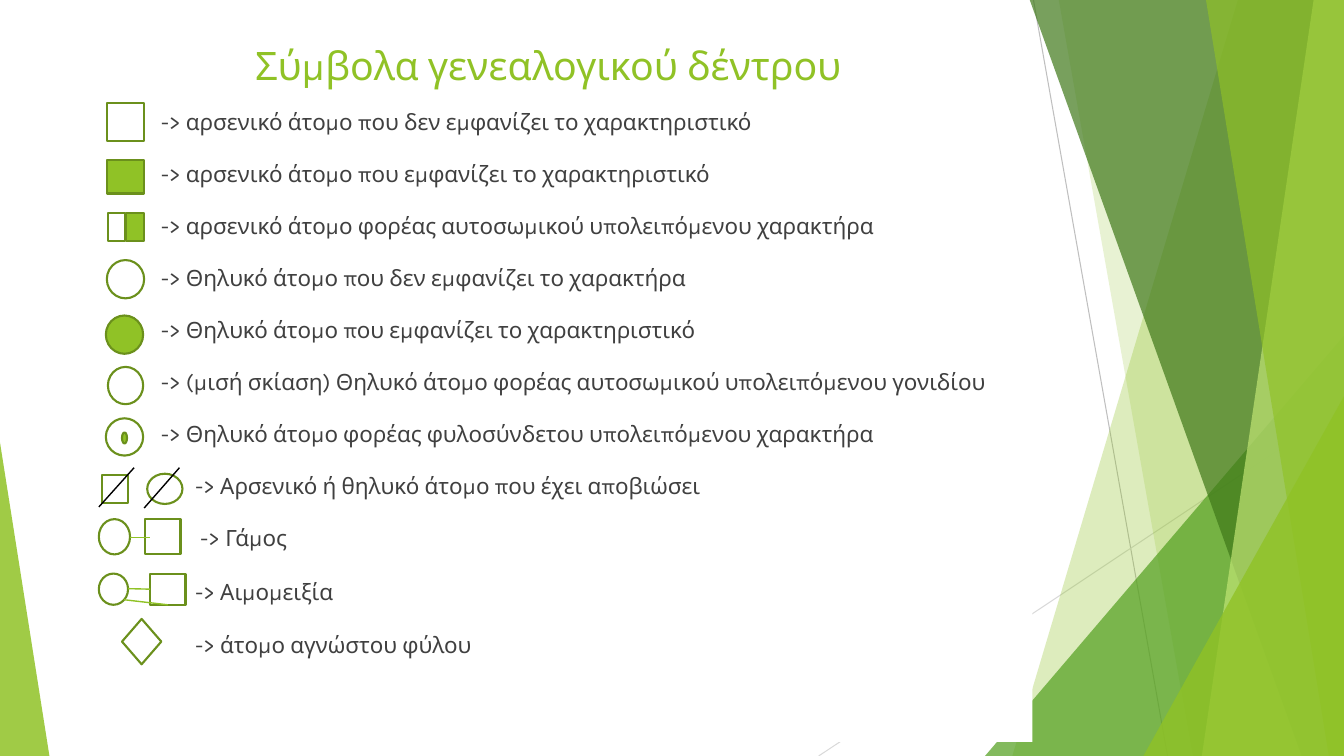
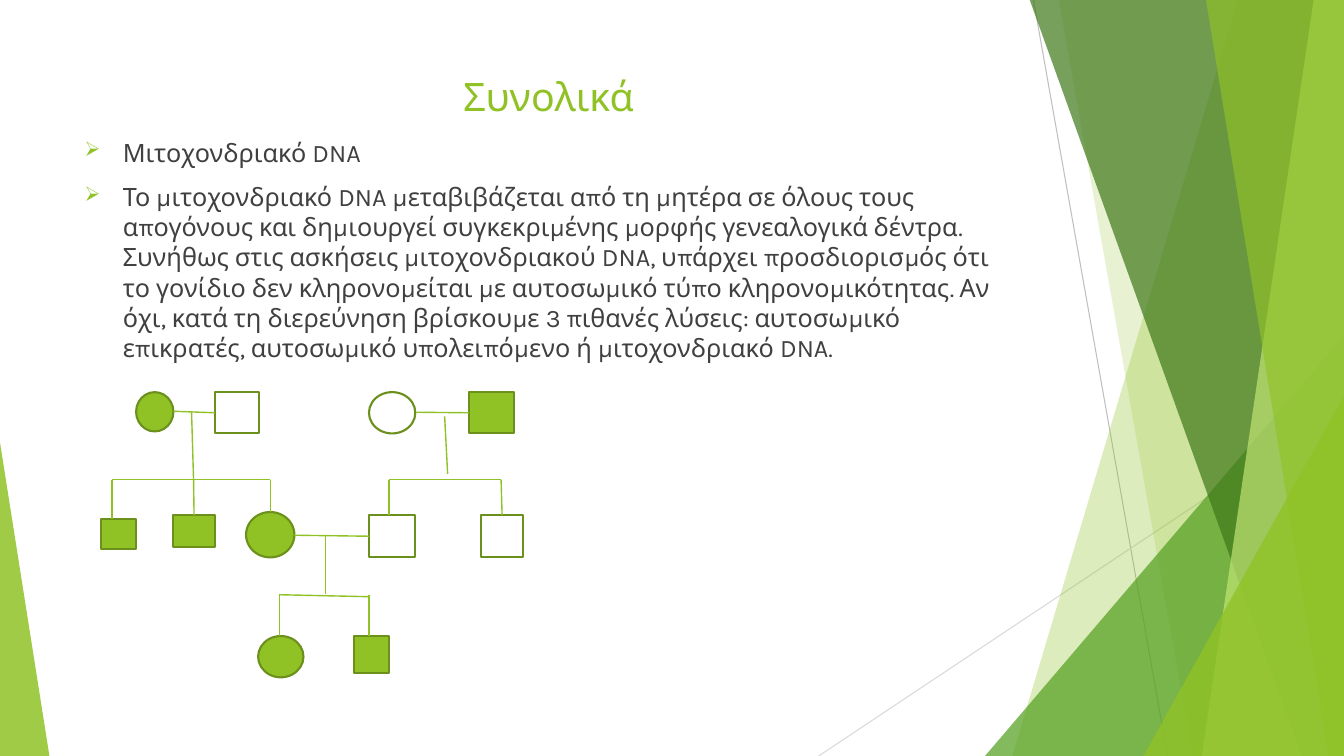
from lxml import etree
from pptx import Presentation
from pptx.dml.color import RGBColor
from pptx.enum.shapes import MSO_CONNECTOR, MSO_SHAPE
from pptx.enum.text import MSO_ANCHOR, PP_ALIGN
from pptx.oxml.ns import qn
from pptx.util import Inches, Pt

COLORS = {
    "lime": "90C226",
    "olive": "6B901C",
    "green": "54A021",
    "forest": "3F7819",
    "pale": "C0E474",
    "text": "404040",
    "white": "FFFFFF",
    "black": "000000",
    "rule": "BFBFBF",
    "light_rule": "D9D9D9",
}
FONT = "Karla"
WIDTH, HEIGHT = 13.33, 7.5
RECT, OVAL, DIAMOND = MSO_SHAPE.RECTANGLE, MSO_SHAPE.OVAL, MSO_SHAPE.DIAMOND
TOP, LEFT, BOTTOM = 0, 1, 2

LEGEND = [
    ("-> αρσενικό άτομο που δεν εμφανίζει το χαρακτηριστικό", 0.66, 18),
    ("-> αρσενικό άτομο που εμφανίζει το χαρακτηριστικό", 0.66, 18),
    ("-> αρσενικό άτομο φορέας αυτοσωμικού υπολειπόμενου χαρακτήρα", 0.66, 18),
    ("-> Θηλυκό άτομο που δεν εμφανίζει το χαρακτήρα", 0.66, 18),
    ("-> Θηλυκό άτομο που εμφανίζει το χαρακτηριστικό", 0.66, 18),
    ("-> (μισή σκίαση) Θηλυκό άτομο φορέας αυτοσωμικού υπολειπόμενου γονιδίου", 0.66, 18),
    ("-> Θηλυκό άτομο φορέας φυλοσύνδετου υπολειπόμενου χαρακτήρα", 0.66, 18),
    ("-> Αρσενικό ή θηλυκό άτομο που έχει αποβιώσει", 1, 18),
    ("-> Γάμος", 1.05, 18),
    ("-> Αιμομειξία", 1, 19),
    ("-> άτομο αγνώστου φύλου", 1, 19),
]
SUMMARY = [
    "Μιτοχονδριακό DNA",
    "Το μιτοχονδριακό DNA μεταβιβάζεται από τη μητέρα σε όλους τους απογόνους "
    "και δημιουργεί συγκεκριμένης μορφής γενεαλογικά δέντρα. Συνήθως στις "
    "ασκήσεις μιτοχονδριακού DNA, υπάρχει προσδιορισμός ότι το γονίδιο δεν "
    "κληρονομείται με αυτοσωμικό τύπο κληρονομικότητας. Αν όχι, κατά τη "
    "διερεύνηση βρίσκουμε 3 πιθανές λύσεις: αυτοσωμικό επικρατές, αυτοσωμικό "
    "υπολειπόμενο ή μιτοχονδριακό DNA.",
]


def rgb(name):
    return RGBColor.from_string(COLORS[name])


def paint(shape, color, opacity=100, outline=None):
    shape.shadow.inherit = False
    shape.fill.solid()
    shape.fill.fore_color.rgb = rgb(color)
    if opacity < 100:
        tint = shape.fill._xPr.find(qn("a:solidFill"))[0]
        etree.SubElement(tint, qn("a:alpha")).set("val", str(opacity * 1000))
    if outline:
        shape.line.color.rgb = rgb(outline)
        shape.line.width = Pt(1.5)
    else:
        shape.line.fill.background()


def add_link(slide, origin, start, end, color="lime", width=1, target=None, side=None):
    x, y = origin
    points = [Inches(v) for v in (x + start[0], y + start[1], x + end[0], y + end[1])]
    link = slide.shapes.add_connector(MSO_CONNECTOR.STRAIGHT, *points)
    link.line.color.rgb = rgb(color)
    link.line.width = Pt(width)
    etree.SubElement(link._element.spPr, qn("a:effectLst"))
    if target is not None:
        link.end_connect(target, side)


def add_symbol(slide, origin, kind, left, top, width, height, affected=False):
    symbol = slide.shapes.add_shape(
        kind, Inches(origin[0] + left), Inches(origin[1] + top), Inches(width), Inches(height))
    paint(symbol, "lime" if affected else "white", outline="olive")
    return symbol


def style(paragraph, size, color):
    paragraph.font.size = Pt(size)
    paragraph.font.name = FONT
    paragraph.font.color.rgb = rgb(color)


def add_band(slide, top_left, bottom_left, color, opacity):
    builder = slide.shapes.build_freeform(Inches(top_left), Inches(-0.01))
    corners = [(WIDTH, -0.01), (WIDTH, HEIGHT), (bottom_left, HEIGHT)]
    builder.add_line_segments([(Inches(x), Inches(y)) for x, y in corners])
    paint(builder.convert_to_shape(), color, opacity)


def add_corner(slide, left, top, width, peak, color, opacity):
    corner = slide.shapes.add_shape(
        MSO_SHAPE.ISOSCELES_TRIANGLE, Inches(left), Inches(top),
        Inches(width), Inches(HEIGHT - top))
    corner.adjustments[0] = peak
    paint(corner, color, opacity)


def add_backdrop(slide):
    add_link(slide, (0, 0), (10.25, 0), (11.58, HEIGHT), "rule", 0.75)
    add_link(slide, (0, 0), (WIDTH, 4.03), (8.12, HEIGHT), "light_rule", 0.75)
    add_band(slide, 12.28, 10.04, "lime", 30)
    add_band(slide, 10.5, 11.83, "lime", 20)
    add_corner(slide, 9.77, 3.33, 3.56, 1, "green", 72)
    add_band(slide, 10.21, 12.91, "forest", 70)
    add_band(slide, 13.03, 11.92, "pale", 70)
    add_band(slide, 11.96, 13.18, "lime", 65)
    add_corner(slide, 11.34, 3.93, 1.99, 1, "lime", 80)
    add_corner(slide, 0, 4.39, 0.49, 0, "lime", 85)


def add_title(slide, text, box):
    title = slide.shapes.add_textbox(*map(Inches, box)).text_frame
    title.word_wrap = True
    heading = title.paragraphs[0]
    heading.text = text
    heading.alignment = PP_ALIGN.CENTER
    style(heading, 28, "lime")


def add_legend(slide, box):
    panel = slide.shapes.add_shape(RECT, *map(Inches, box))
    paint(panel, "white")
    frame = panel.text_frame
    frame.word_wrap = True
    frame.vertical_anchor = MSO_ANCHOR.TOP
    for index, (text, indent, gap) in enumerate(LEGEND):
        entry = frame.add_paragraph() if index else frame.paragraphs[0]
        entry.text = text
        entry.alignment = PP_ALIGN.LEFT
        if index:
            entry.space_before = Pt(gap)
        properties = entry._p.get_or_add_pPr()
        properties.set("marL", str(Inches(indent)))
        properties.set("indent", "0")
        style(entry, 16, "text")


def add_legend_symbols(slide, origin):
    for symbol in [
        (RECT, 0.08, 0, 0.37, 0.38),
        (RECT, 0.08, 0.57, 0.37, 0.33, True),
        (RECT, 0.09, 1.09, 0.17, 0.28),
        (RECT, 0.27, 1.09, 0.18, 0.28, True),
        (OVAL, 0.08, 1.56, 0.37, 0.38),
        (OVAL, 0.07, 2.11, 0.37, 0.38, True),
        (OVAL, 0.09, 2.62, 0.35, 0.37),
        (OVAL, 0.07, 3.13, 0.37, 0.37),
        (OVAL, 0.23, 3.27, 0.05, 0.11, True),
        (RECT, 0.03, 3.69, 0.26, 0.28),
        (OVAL, 0.48, 3.68, 0.35, 0.3),
        (OVAL, 0, 4.13, 0.31, 0.35),
        (RECT, 0.46, 4.13, 0.35, 0.35),
        (OVAL, 0, 4.67, 0.29, 0.31),
        (DIAMOND, 0.23, 5.12, 0.39, 0.45),
    ]:
        add_symbol(slide, origin, *symbol)
    relative = add_symbol(slide, origin, RECT, 0.51, 4.67, 0.35, 0.31)
    add_link(slide, origin, (0, 4.01), (0.35, 3.62), "black")
    add_link(slide, origin, (0.8, 3.62), (0.45, 4.02), "black")
    add_link(slide, origin, (0.31, 4.31), (0.51, 4.31))
    add_link(slide, origin, (0.29, 4.82), (0.51, 4.82), target=relative, side=LEFT)
    add_link(slide, origin, (0.25, 4.93), (0.69, 4.98), target=relative, side=BOTTOM)


def add_summary(slide, box):
    frame = slide.shapes.add_textbox(*map(Inches, box)).text_frame
    frame.word_wrap = True
    for index, text in enumerate(SUMMARY):
        point = frame.add_paragraph() if index else frame.paragraphs[0]
        point.text = text
        if index:
            point.space_before = Pt(10)
        properties = point._p.get_or_add_pPr()
        properties.set("marL", str(Inches(0.38)))
        properties.set("indent", str(-Inches(0.38)))
        tint = etree.SubElement(properties, qn("a:buClr"))
        etree.SubElement(tint, qn("a:srgbClr")).set("val", COLORS["lime"])
        etree.SubElement(properties, qn("a:buSzPct")).set("val", "80000")
        etree.SubElement(properties, qn("a:buChar")).set("char", "➢")
        style(point, 18, "text")


def add_pedigree(slide, origin):
    people = {
        name: add_symbol(slide, origin, *symbol)
        for name, symbol in {
            "grandmother": (OVAL, 0.35, 0, 0.37, 0.39, True),
            "grandfather": (RECT, 1.13, 0, 0.44, 0.41),
            "other grandmother": (OVAL, 2.66, 0, 0.46, 0.41),
            "other grandfather": (RECT, 3.65, 0, 0.45, 0.41, True),
            "elder uncle": (RECT, 0, 1.26, 0.35, 0.3, True),
            "younger uncle": (RECT, 0.72, 1.22, 0.41, 0.32, True),
            "mother": (OVAL, 1.44, 1.19, 0.48, 0.45, True),
            "father": (RECT, 2.66, 1.22, 0.46, 0.42),
            "other uncle": (RECT, 3.77, 1.22, 0.42, 0.42),
            "daughter": (OVAL, 1.56, 2.42, 0.45, 0.41, True),
            "son": (RECT, 2.51, 2.42, 0.35, 0.37, True),
        }.items()
    }
    for start, end, husband in [
        ((0.72, 0.19), (1.13, 0.2), "grandfather"),
        ((3.13, 0.2), (3.65, 0.2), "other grandfather"),
        ((1.92, 1.42), (2.66, 1.43), "father"),
    ]:
        add_link(slide, origin, start, end, target=people[husband], side=LEFT)
    for start, end in [
        ((0.9, 0.2), (0.92, 0.87)),
        ((3.41, 0.24), (3.44, 0.81)),
        ((2.23, 1.43), (2.23, 2)),
        ((0.11, 0.87), (1.68, 0.87)),
        ((2.86, 0.87), (3.97, 0.87)),
        ((1.77, 2.01), (2.66, 2.03)),
    ]:
        add_link(slide, origin, start, end)
    for x, top, bottom, child in [
        (0.11, 0.87, 1.26, None),
        (0.92, 0.87, 1.22, "younger uncle"),
        (1.68, 0.87, 1.19, None),
        (2.86, 0.87, 1.22, None),
        (3.97, 0.87, 1.22, "other uncle"),
        (1.77, 2, 2.42, None),
        (2.66, 2.01, 2.42, None),
    ]:
        add_link(slide, origin, (x, top), (x, bottom), target=people.get(child), side=TOP)


def start_slide(deck, title, title_box):
    slide = deck.slides.add_slide(deck.slide_layouts[6])
    add_backdrop(slide)
    add_title(slide, title, title_box)
    return slide


def main():
    deck = Presentation()
    deck.slide_width, deck.slide_height = Inches(WIDTH), Inches(HEIGHT)

    symbols = start_slide(deck, "Σύμβολα γενεαλογικού δέντρου", (0.74, 0.36, 9.4, 0.66))
    add_legend(symbols, (0.84, 1.02, 9.4, 6.34))
    add_legend_symbols(symbols, (0.98, 1.02))

    overview = start_slide(deck, "Συνολικά", (0.74, 0.67, 9.4, 0.64))
    add_summary(overview, (0.74, 1.31, 9.4, 5.3))
    add_pedigree(overview, (1, 3.89))

    deck.save("out.pptx")


if __name__ == "__main__":
    main()
